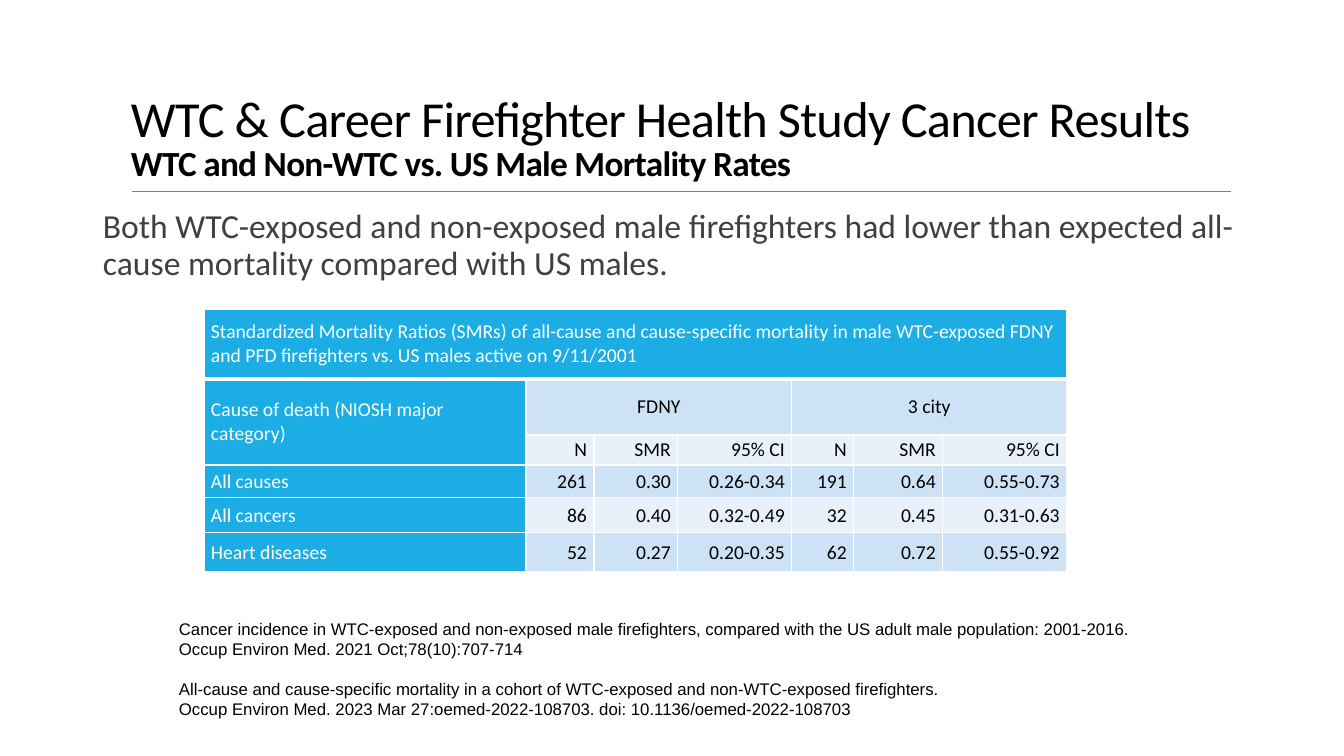
"""Build the firefighter mortality results slide."""
from lxml import etree
from pptx import Presentation, util as u
from pptx.dml.color import RGBColor
from pptx.enum import shapes, text
from pptx.oxml.ns import qn

BLACK = RGBColor(0x00, 0x00, 0x00)
WHITE = RGBColor(0xFF, 0xFF, 0xFF)
GREY = RGBColor(0x40, 0x40, 0x40)
RULE = RGBColor(0x80, 0x80, 0x80)
BLUE = RGBColor(0x1C, 0xAD, 0xE4)
BAND = RGBColor(0xCD, 0xE3, 0xF5)
PALE = RGBColor(0xE8, 0xF1, 0xFA)

TITLE = "WTC & Career Firefighter Health Study Cancer Results"
SUBTITLE = "WTC and Non-WTC vs. US Male Mortality Rates"
FINDING = ("Both WTC-exposed and non-exposed male firefighters had lower than "
           "expected all-cause mortality compared with US males.")
CITATIONS = [
    ("Cancer incidence in WTC-exposed and non-exposed male firefighters, "
     "compared with the US adult male population: 2001-2016.",
     "Occup Environ Med. 2021 Oct;78(10):707-714"),
    ("All-cause and cause-specific mortality in a cohort of WTC-exposed and "
     "non-WTC-exposed firefighters.",
     "Occup Environ Med. 2023 Mar 27:oemed-2022-108703. doi: 10.1136/oemed-2022-108703"),
]
HEADING = ("Standardized Mortality Ratios (SMRs) of all-cause and cause-specific mortality "
           "in male WTC-exposed FDNY and PFD firefighters vs. US males active on 9/11/2001")
ROWS = [
    [HEADING] + [""] * 6,
    ["Cause of death (NIOSH major category)", "FDNY", "", "", "3 city", "", ""],
    [""] + ["N", "SMR", "95% CI"] * 2,
    ["All causes", "261", "0.30", "0.26-0.34", "191", "0.64", "0.55-0.73"],
    ["All cancers", "86", "0.40", "0.32-0.49", "32", "0.45", "0.31-0.63"],
    ["Heart diseases", "52", "0.27", "0.20-0.35", "62", "0.72", "0.55-0.92"],
]
MERGES = [((0, 0), (0, 6)), ((1, 0), (2, 0)), ((1, 1), (1, 3)), ((1, 4), (1, 6))]
COLS = [322, 68, 84, 114, 62, 89, 124]
HEIGHTS = [70, 56, 30, 33, 35, 39]


def px(n):
    return u.Emu(round(n * 914400 / 100.8))


def assign(obj, values):
    for name, value in values.items():
        setattr(obj, name, value)


def add_run(p, words, size, color, name="Calibri", bold=False):
    r = p.add_run()
    r.text = words
    assign(r.font, {"size": u.Pt(size), "name": name, "bold": bold})
    r.font.color.rgb = color
    return r


def add_box(s, box, **frame):
    tf = s.shapes.add_textbox(*map(px, box)).text_frame
    assign(tf, {"word_wrap": True, **frame})
    return tf


def add_borders(cell, widths):
    tc_pr = cell._tc.get_or_add_tcPr()
    for i, (side, width) in enumerate(widths.items()):
        ln = etree.Element(qn("a:ln" + side), w=str(u.Pt(width)))
        fill = etree.SubElement(ln, qn("a:solidFill"))
        etree.SubElement(fill, qn("a:srgbClr"), val=str(WHITE))
        tc_pr.insert(i, ln)


def add_title(s):
    tf = add_box(s, (121, 29, 1109, 160), vertical_anchor=text.MSO_ANCHOR.BOTTOM)
    p = tf.paragraphs[0]
    p.line_spacing = 0.85
    head = add_run(p, TITLE, 36, BLACK)
    p.add_line_break()
    sub = add_run(p, SUBTITLE, 25.2, BLACK, bold=True)
    for r in (head, sub):
        r._r.get_or_add_rPr().set("spc", "-50")


def add_rule(s):
    sp = s.shapes.add_connector(shapes.MSO_CONNECTOR.STRAIGHT,
                                *map(px, (132, 191, 1231, 191)))
    sp.line.color.rgb = RULE
    sp.line.width = u.Pt(0.5)
    etree.SubElement(sp._element.spPr, qn("a:effectLst"))


def add_finding(s):
    tf = add_box(s, (93, 205, 1159, 484), margin_left=px(10), margin_right=0)
    p = tf.paragraphs[0]
    assign(p, {"line_spacing": 0.9, "space_before": u.Pt(12), "space_after": u.Pt(2)})
    add_run(p, FINDING, 24, GREY)


def add_rates(s):
    box = map(px, (204, 309, sum(COLS), sum(HEIGHTS)))
    table = s.shapes.add_table(len(ROWS), len(COLS), *box).table
    for col, width in zip(table.columns, COLS):
        col.width = px(width)
    for row, height in zip(table.rows, HEIGHTS):
        row.height = px(height)
    for first, last in MERGES:
        table.cell(*first).merge(table.cell(*last))
    for i, row in enumerate(ROWS):
        for j, words in enumerate(row):
            cell = table.cell(i, j)
            label = i == 0 or j == 0
            assign(cell, {"margin_left": px(7), "margin_right": px(7), "margin_top": 0,
                          "margin_bottom": 0, "vertical_anchor": text.MSO_ANCHOR.MIDDLE})
            cell.fill.solid()
            cell.fill.fore_color.rgb = BLUE if label else BAND if i % 2 else PALE
            add_borders(cell, {"L": 1, "R": 1, "T": 1, "B": 1 if i else 3})
            if words:
                p = cell.text_frame.paragraphs[0]
                p.alignment = (text.PP_ALIGN.LEFT if label else
                               text.PP_ALIGN.CENTER if i == 1 else text.PP_ALIGN.RIGHT)
                add_run(p, words, 14, WHITE if label else BLACK)


def add_citations(s):
    tf = add_box(s, (169, 614, 983, 112), word_wrap=False,
                 auto_size=text.MSO_AUTO_SIZE.SHAPE_TO_FIT_TEXT)
    p = tf.paragraphs[0]
    for i, lines in enumerate(CITATIONS):
        for j, words in enumerate(lines):
            if i or j:
                p = tf.add_paragraph()
            if i and not j:
                p.space_before = u.Pt(14)
            add_run(p, words, 12, BLACK, "Arial")


def main():
    prs = Presentation()
    assign(prs, {"slide_width": px(1344), "slide_height": px(756)})
    s = prs.slides.add_slide(prs.slide_layouts[6])
    for add_part in (add_rule, add_finding, add_rates, add_citations, add_title):
        add_part(s)
    prs.save("out.pptx")


if __name__ == "__main__":
    main()
